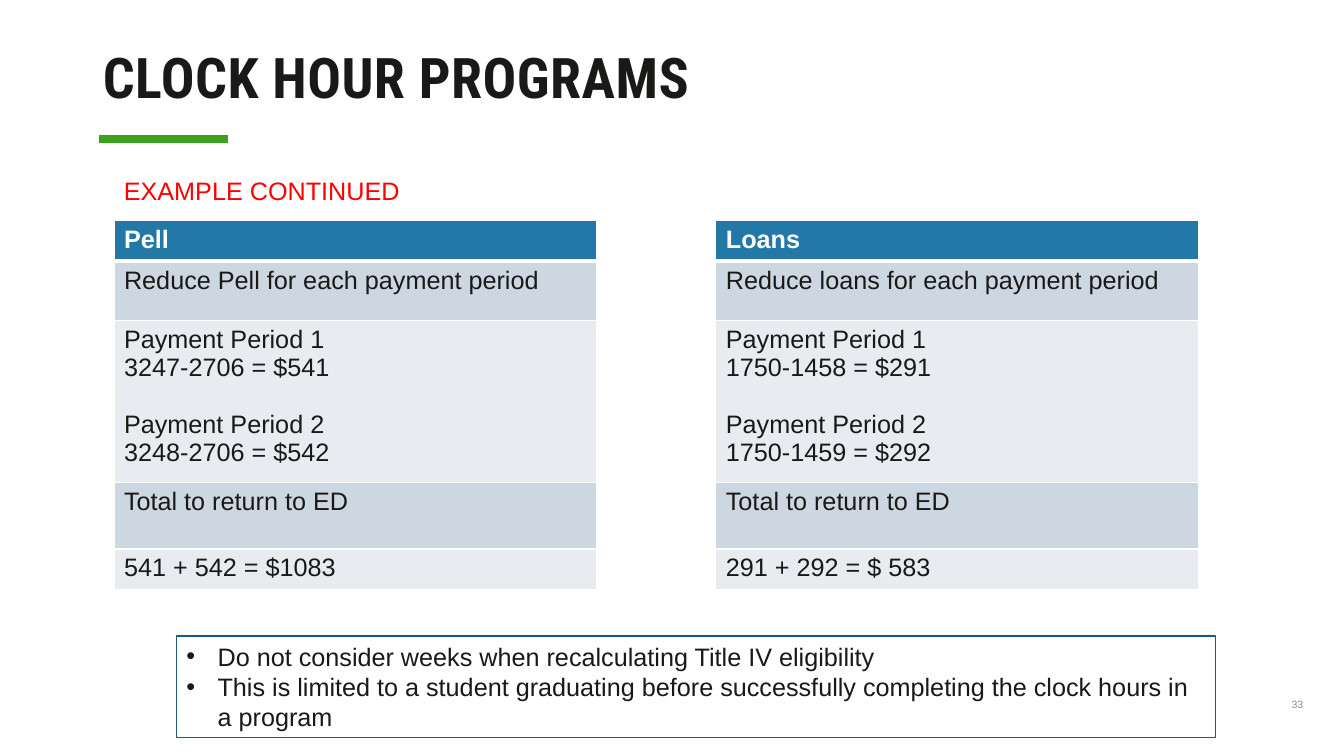
from lxml import etree
from pptx import Presentation
from pptx.dml.color import RGBColor
from pptx.enum.shapes import MSO_CONNECTOR, MSO_SHAPE
from pptx.enum.text import MSO_ANCHOR, PP_ALIGN
from pptx.oxml.ns import qn
from pptx.util import Inches, Pt

LINE, RECT = MSO_CONNECTOR.STRAIGHT, MSO_SHAPE.RECTANGLE
TOP, LEFT = MSO_ANCHOR.TOP, PP_ALIGN.LEFT
WIDE, HIGH = Inches(13.33), Inches(7.5)
INK, WHITE, RED, GREY = "191918", "FFFFFF", "FF0000", "8C8C8C"
GREEN, BLUE, NAVY = "3EA11B", "2279A7", "195A7C"
BANDS = ["CDD7E1", "E8ECF1"]
ROWS = [0.11, 0.16, 0.44, 0.18, 0.11]
GAP = Pt(20.5)

PELL = [["Pell"], ["Reduce Pell for each payment period"],
        ["Payment Period 1", "3247-2706 = $541",
         "Payment Period 2", "3248-2706 = $542"],
        ["Total to return to ED"], ["541 + 542 = $1083"]]
LOANS = [["Loans"], ["Reduce loans for each payment period"],
         ["Payment Period 1", "1750-1458 = $291",
          "Payment Period 2", "1750-1459 = $292"],
         ["Total to return to ED"], ["291 + 292 = $ 583"]]
NOTES = ["Do not consider weeks when recalculating Title IV eligibility",
         "This is limited to a student graduating before successfully "
         "completing the clock hours in a program"]


def color(code):
    return RGBColor.from_string(code)


def area(x, y, w, h):
    """Turn percentages of the slide into a box."""
    return (round(WIDE * x / 100), round(HIGH * y / 100),
            round(WIDE * w / 100), round(HIGH * h / 100))


def write(para, text, ink=INK, size=18, bold=False, face="Arial"):
    para.alignment = LEFT
    run = para.add_run()
    run.text = text
    font = run.font
    font.name, font.size, font.bold = face, Pt(size), bold
    font.color.rgb = color(ink)
    return run


def lines(frame, texts):
    """Yield one paragraph with its text for each line."""
    for i, text in enumerate(texts):
        yield (frame.add_paragraph() if i else frame.paragraphs[0]), text


def label(slide, box, text, pad=(0.1, 0.05, 0.1, 0.05), **look):
    frame = slide.shapes.add_textbox(*box).text_frame
    frame.word_wrap = True
    frame.vertical_anchor = TOP
    (frame.margin_left, frame.margin_top,
     frame.margin_right, frame.margin_bottom) = map(Inches, pad)
    para = frame.paragraphs[0]
    return para, write(para, text, **look)


def title(slide, box, text):
    para, run = label(slide, box, text, (0.13, 0.07, 0.13, 0.07),
                      size=40, bold=True, face="Roboto Condensed")
    para.line_spacing = 0.9
    run.font._element.set("spc", "40")


def accent(slide, box):
    x, y, w, h = box
    bar = slide.shapes.add_connector(LINE, x, y, x + w, y + h)
    bar.line.color.rgb = color(GREEN)
    bar.line.width = Pt(6.25)
    etree.SubElement(bar._element.spPr, qn("a:effectLst"))


def edge(cell, side, width):
    props = cell._tc.get_or_add_tcPr()
    line = etree.SubElement(props, qn("a:ln" + side), w=str(Pt(width)))
    fill = etree.SubElement(line, qn("a:solidFill"))
    etree.SubElement(fill, qn("a:srgbClr"), val=WHITE)


def award(slide, box, rows):
    """Place a one-column table with a header and banded rows."""
    table = slide.shapes.add_table(len(rows), 1, *box).table
    for i, (texts, share) in enumerate(zip(rows, ROWS)):
        table.rows[i].height = round(box[3] * share)
        cell = table.cell(i, 0)
        head = i == 0
        for side in "LRTB":
            thick = (i, side) in ((0, "B"), (1, "T"))
            edge(cell, side, 3 if thick else 1)
        cell.fill.solid()
        cell.fill.fore_color.rgb = color(BLUE if head else BANDS[(i - 1) % 2])
        for n, (para, text) in enumerate(lines(cell.text_frame, texts)):
            if n and n % 2 == 0:
                para.space_before = GAP
            write(para, text, WHITE if head else INK, bold=head)


def remarks(slide, box, texts):
    """Place the outlined box with its bullets."""
    shape = slide.shapes.add_shape(RECT, *box)
    shape.shadow.inherit = False
    shape.fill.background()
    shape.line.color.rgb = color(NAVY)
    shape.line.width = Pt(0.75)
    frame = shape.text_frame
    frame.word_wrap = True
    frame.vertical_anchor = TOP
    for para, text in lines(frame, texts):
        props = para._p.get_or_add_pPr()
        props.set("marL", str(Inches(0.31)))
        props.set("indent", str(-Inches(0.31)))
        etree.SubElement(props, qn("a:buFont"), typeface="Arial")
        etree.SubElement(props, qn("a:buChar"), char="•")
        write(para, text)


def main():
    deck = Presentation()
    deck.slide_width, deck.slide_height = WIDE, HIGH
    slide = deck.slides.add_slide(deck.slide_layouts[6])
    accent(slide, area(7.35, 18.4, 9.6, 0))
    title(slide, area(6.68, 5.73, 72.84, 11.6), "CLOCK HOUR PROGRAMS")
    label(slide, area(96.1, 92.27, 3.15, 5.47), "33", (0, 0, 0.1, 0.05),
          ink=GREY, size=7.5)
    label(slide, area(8.48, 22.53, 31.66, 5.33), "EXAMPLE CONTINUED", ink=RED)
    for x, rows in ((8.48, PELL), (53.26, LOANS)):
        award(slide, area(x, 29.2, 35.93, 48.8), rows)
    remarks(slide, area(13.13, 84.13, 77.34, 13.47), NOTES)
    deck.save("out.pptx")


if __name__ == "__main__":
    main()
